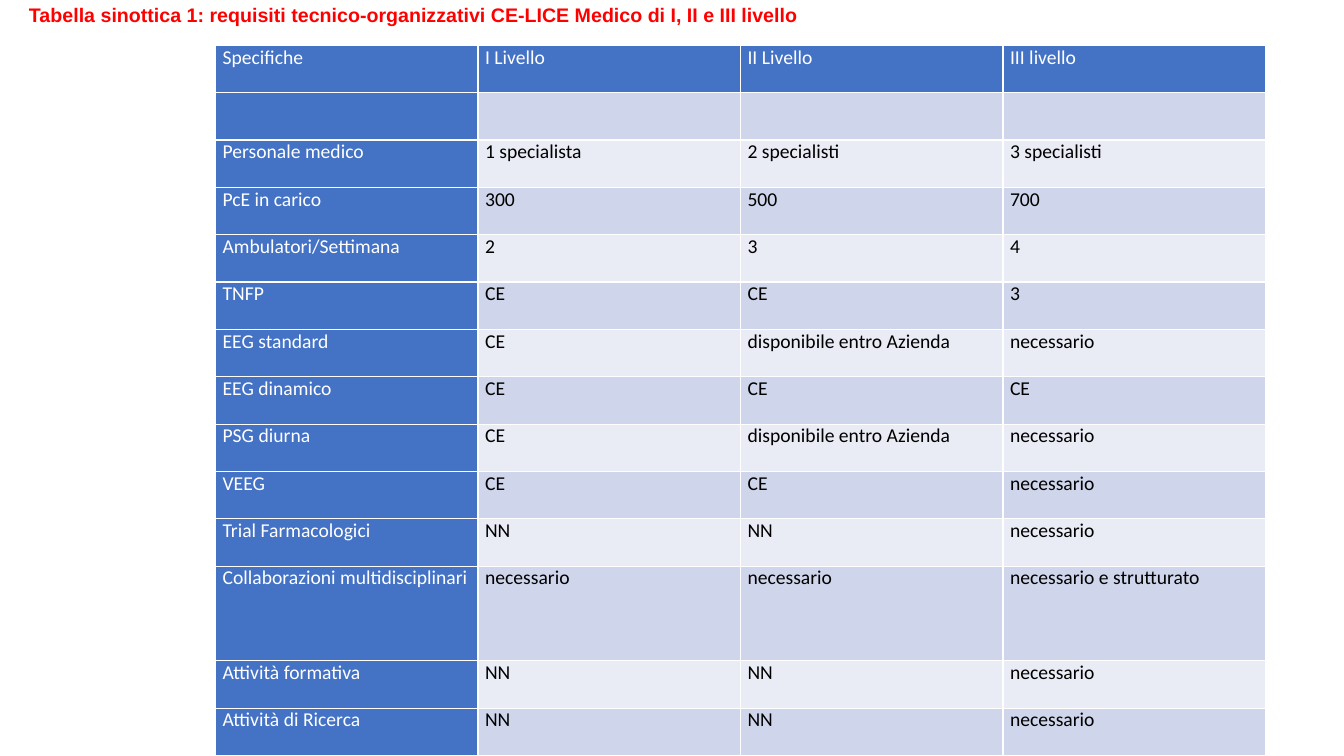
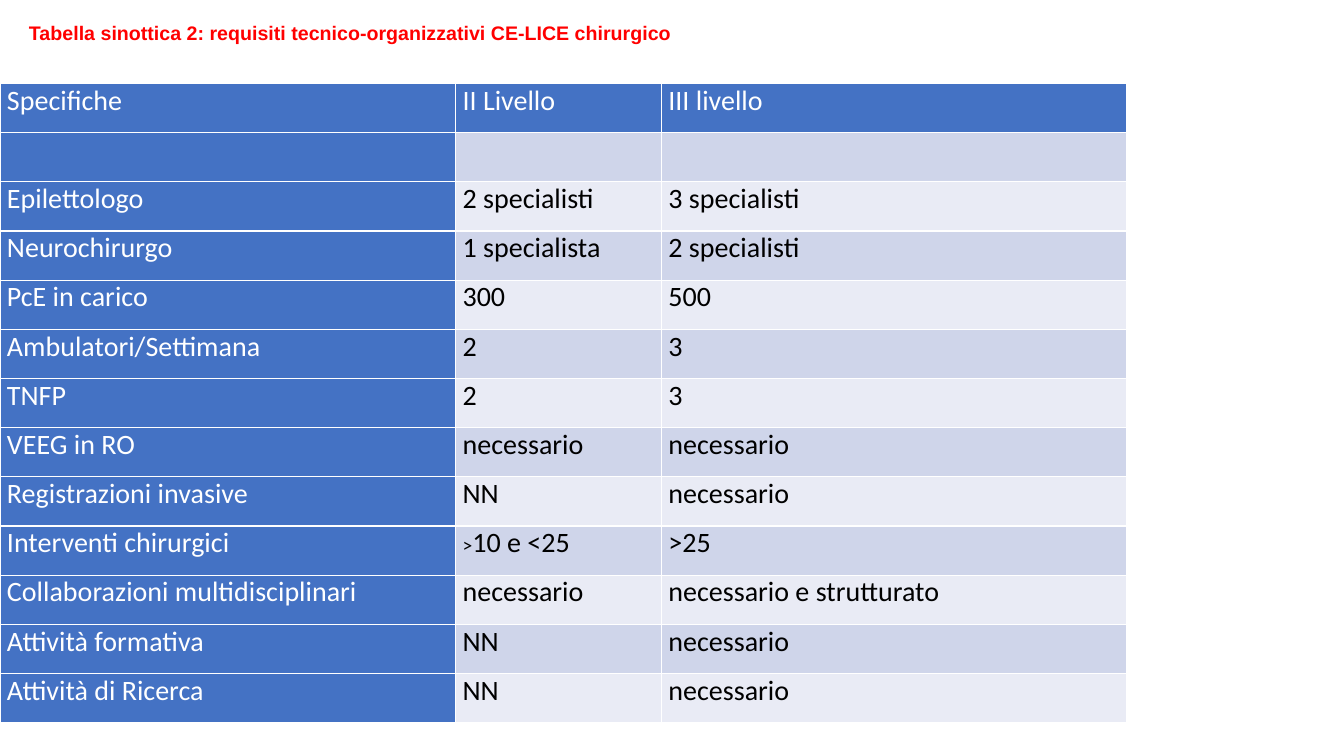
from lxml.etree import SubElement
from pptx import Presentation
from pptx.dml.color import RGBColor
from pptx.enum.text import MSO_ANCHOR, MSO_AUTO_SIZE, PP_ALIGN
from pptx.oxml.ns import qn
from pptx.util import Pt

WHITE, BLACK, RED = "FFFFFF", "000000", "FF0000"
BLUE, BAND_DARK, BAND_LIGHT = "4472C4", "CFD5EA", "E9EBF5"
TITLE_LEFT, TITLE_HEIGHT, TITLE_SIZE = 13.5, 24.5, 14
CELL_INSET = 5
TITLE_ONLY = 5

SLIDES = [
    {
        "title": "Tabella sinottica 1: requisiti tecnico-organizzativi CE-LICE Medico di I, II e III livello",
        "title_top": -2,
        "title_width": 680,
        "left": 154,
        "top": 32.4,
        "columns": [187.5] * 4,
        "row_height": 33.84,
        "tall_rows": {"Collaborazioni multidisciplinari": 2},
        "size": 14,
        "rows": [
            ("Specifiche", "I Livello", "II Livello", "III livello"),
            ("", "", "", ""),
            ("Personale medico", "1 specialista", "2 specialisti", "3 specialisti"),
            ("PcE in carico", "300", "500", "700"),
            ("Ambulatori/Settimana", "2", "3", "4"),
            ("TNFP", "CE", "CE", "3"),
            ("EEG standard", "CE", "disponibile entro Azienda", "necessario"),
            ("EEG dinamico", "CE", "CE", "CE"),
            ("PSG diurna", "CE", "disponibile entro Azienda", "necessario"),
            ("VEEG", "CE", "CE", "necessario"),
            ("Trial Farmacologici", "NN", "NN", "necessario"),
            ("Collaborazioni multidisciplinari", "necessario", "necessario", "necessario e strutturato"),
            ("Attività formativa", "NN", "NN", "necessario"),
            ("Attività di Ricerca", "NN", "NN", "necessario"),
        ],
    },
    {
        "title": "Tabella sinottica 2: requisiti tecnico-organizzativi CE-LICE chirurgico",
        "title_top": 11,
        "title_width": 628,
        "left": 0,
        "top": 59.6,
        "columns": [325.5, 147, 332.5],
        "row_height": 35.13,
        "tall_rows": {},
        "size": 20,
        "rows": [
            ("Specifiche", "II Livello", "III livello"),
            ("", "", ""),
            ("Epilettologo", "2 specialisti", "3 specialisti"),
            ("Neurochirurgo", "1 specialista", "2 specialisti"),
            ("PcE in carico", "300", "500"),
            ("Ambulatori/Settimana", "2", "3"),
            ("TNFP", "2", "3"),
            ("VEEG in RO", "necessario", "necessario"),
            ("Registrazioni invasive", "NN", "necessario"),
            ("Interventi chirurgici", ((">", 14), ("10 e <25", 20)), ">25"),
            ("Collaborazioni multidisciplinari", "necessario", "necessario e strutturato"),
            ("Attività formativa", "NN", "necessario"),
            ("Attività di Ricerca", "NN", "necessario"),
        ],
    },
]


def color(value):
    return RGBColor.from_string(value)


def style(para, name, size, ink, bold=False):
    para.alignment = PP_ALIGN.JUSTIFY
    font = para.font
    font.name, font.size, font.bold = name, Pt(size), bold
    font.color.rgb = color(ink)


def add_title(slide, content):
    title = slide.shapes.title
    title.left, title.top = Pt(TITLE_LEFT), Pt(content["title_top"])
    title.width, title.height = Pt(content["title_width"]), Pt(TITLE_HEIGHT)
    frame = title.text_frame
    frame.text = content["title"]
    frame.word_wrap = True
    frame.auto_size = MSO_AUTO_SIZE.NONE
    frame.vertical_anchor = MSO_ANCHOR.MIDDLE
    style(frame.paragraphs[0], "Arial", TITLE_SIZE, RED, True)


def add_borders(cell):
    properties = cell._tc.get_or_add_tcPr()
    for side in ("a:lnL", "a:lnR", "a:lnT", "a:lnB"):
        line = SubElement(properties, qn(side), w=str(Pt(1)))
        fill = SubElement(line, qn("a:solidFill"))
        SubElement(fill, qn("a:srgbClr"), val=WHITE)


def fill_cell(cell, content, size, background, ink):
    cell.margin_left = cell.margin_right = Pt(CELL_INSET)
    cell.margin_top = cell.margin_bottom = 0
    add_borders(cell)
    cell.fill.solid()
    cell.fill.fore_color.rgb = color(background)
    para = cell.text_frame.paragraphs[0]
    if isinstance(content, str):
        para.text = content
    else:
        for text, span_size in content:
            span = para.add_run()
            span.text = text
            span.font.size = Pt(span_size)
    style(para, "Calibri", size, ink)


def add_table(slide, content):
    rows, columns = content["rows"], content["columns"]
    heights = [content["row_height"] * content["tall_rows"].get(row[0], 1) for row in rows]
    table = slide.shapes.add_table(
        len(rows), len(columns), Pt(content["left"]), Pt(content["top"]),
        Pt(sum(columns)), Pt(sum(heights)),
    ).table
    table.first_col = True
    for column, width in zip(table.columns, columns):
        column.width = Pt(width)
    for index, (row, height) in enumerate(zip(rows, heights)):
        table.rows[index].height = Pt(height)
        band = BAND_DARK if index % 2 else BAND_LIGHT
        for position, text in enumerate(row):
            heading = index == 0 or position == 0
            background, ink = (BLUE, WHITE) if heading else (band, BLACK)
            fill_cell(table.cell(index, position), text, content["size"], background, ink)


def main():
    deck = Presentation()
    deck.slide_width, deck.slide_height = Pt(960), Pt(540)
    for content in SLIDES:
        slide = deck.slides.add_slide(deck.slide_layouts[TITLE_ONLY])
        add_title(slide, content)
        add_table(slide, content)
    deck.save("out.pptx")


if __name__ == "__main__":
    main()
